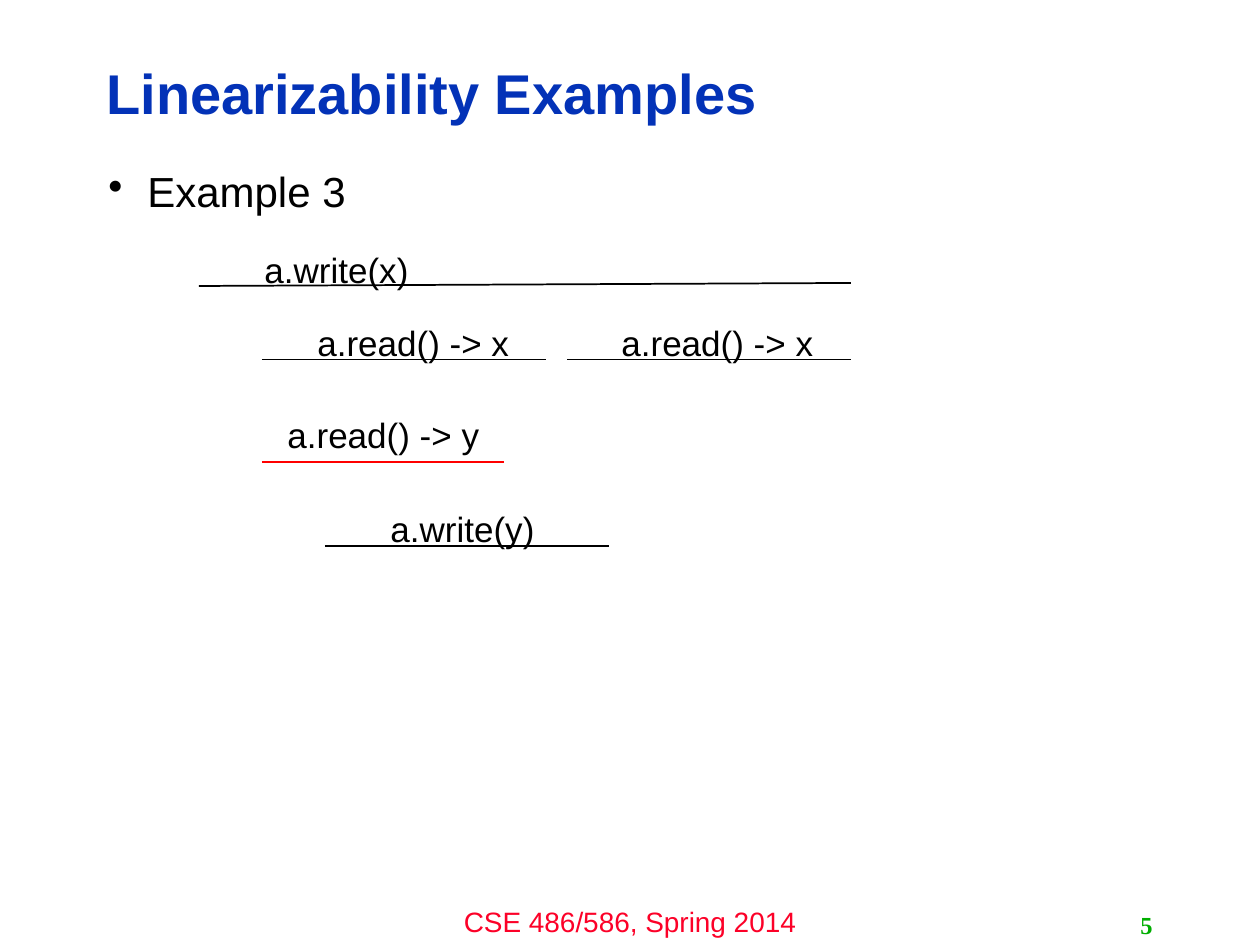
import pptx
import pptx.dml.color
import pptx.enum.shapes
import pptx.enum.text
import pptx.oxml
import pptx.oxml.ns
import pptx.util

EMU_PER_PX = 914400 / 126

BLACK = pptx.dml.color.RGBColor(0x00, 0x00, 0x00)
RED = pptx.dml.color.RGBColor(0xFF, 0x00, 0x00)
TITLE_BLUE = pptx.dml.color.RGBColor(0x03, 0x32, 0xB7)
FOOTER_RED = pptx.dml.color.RGBColor(0xFC, 0x01, 0x28)
NUMBER_GREEN = pptx.dml.color.RGBColor(0x00, 0xAE, 0x00)

LEFT = pptx.enum.text.PP_ALIGN.LEFT
CENTER = pptx.enum.text.PP_ALIGN.CENTER
RIGHT = pptx.enum.text.PP_ALIGN.RIGHT
TOP = pptx.enum.text.MSO_ANCHOR.TOP
MIDDLE = pptx.enum.text.MSO_ANCHOR.MIDDLE

# Operations: text, label left, label top, label width
OPERATIONS = [
    ("a.write(x)", 252, 242, 171),
    ("a.read() -> x", 305, 315, 219),
    ("a.read() -> x", 609, 315, 219),
    ("a.read() -> y", 275, 407, 219),
    ("a.write(y)", 378, 501, 171),
]

# Time spans: start x, start y, end x, end y, colour, width in points
SPANS = [
    (199, 286, 851, 283, BLACK, 1),
    (262, 359, 546, 359, BLACK, 0.5),
    (567, 359, 851, 359, BLACK, 0.5),
    (262, 462, 504, 462, RED, 1),
    (325, 546, 609, 546, BLACK, 1),
]


def px(length):
    return pptx.util.Emu(round(length * EMU_PER_PX))


def add_text(slide, text, left, top, width, height, size, color,
             font="Arial", bold=False, align=LEFT, anchor=TOP, wrap=True):
    box = slide.shapes.add_textbox(px(left), px(top), px(width), px(height))
    frame = box.text_frame
    frame.word_wrap = wrap
    frame.vertical_anchor = anchor
    if not wrap:
        frame.auto_size = pptx.enum.text.MSO_AUTO_SIZE.SHAPE_TO_FIT_TEXT
    paragraph = frame.paragraphs[0]
    paragraph.alignment = align
    run = paragraph.add_run()
    run.text = text
    run.font.name = font
    run.font.size = pptx.util.Pt(size)
    run.font.bold = bold
    run.font.color.rgb = color
    return paragraph


def add_bullet(paragraph, indent):
    properties = paragraph._p.get_or_add_pPr()
    properties.set("marL", str(px(indent)))
    properties.set("indent", str(-px(indent)))
    bullet = pptx.oxml.parse_xml(
        f'<a:buChar {pptx.oxml.ns.nsdecls("a")} char="•"/>')
    properties.append(bullet)


def add_span(slide, start_x, start_y, end_x, end_y, color, width):
    span = slide.shapes.add_connector(
        pptx.enum.shapes.MSO_CONNECTOR.STRAIGHT,
        px(start_x), px(start_y), px(end_x), px(end_y))
    span.line.color.rgb = color
    span.line.width = pptx.util.Pt(width)
    no_effects = pptx.oxml.parse_xml(
        f'<a:effectLst {pptx.oxml.ns.nsdecls("a")}/>')
    span._element.spPr.append(no_effects)


def main():
    deck = pptx.Presentation()
    deck.slide_width = px(1260)
    deck.slide_height = px(945)
    slide = deck.slides.add_slide(deck.slide_layouts[6])

    # Title and example heading
    title = add_text(slide, "Linearizability Examples", 94, 45, 1006, 102,
                     32, TITLE_BLUE, bold=True, anchor=MIDDLE)
    title.line_spacing = 0.9
    example = add_text(slide, "Example 3", 96, 165, 1058, 679, 24, BLACK)
    add_bullet(example, 39)
    example.line_spacing = 0.9

    # Operations on their time spans
    for span in SPANS:
        add_span(slide, *span)
    for text, left, top, width in OPERATIONS:
        add_text(slide, text, left, top, width, 55, 20, BLACK, wrap=False)

    # Footer and slide number
    add_text(slide, "CSE 486/586, Spring 2014", 420, 898, 420, 47,
             16, FOOTER_RED, align=CENTER)
    add_text(slide, "5", 903, 905, 262, 40, 14, NUMBER_GREEN,
             font="Times New Roman", bold=True, align=RIGHT, anchor=MIDDLE)

    deck.save("out.pptx")


if __name__ == "__main__":
    main()
